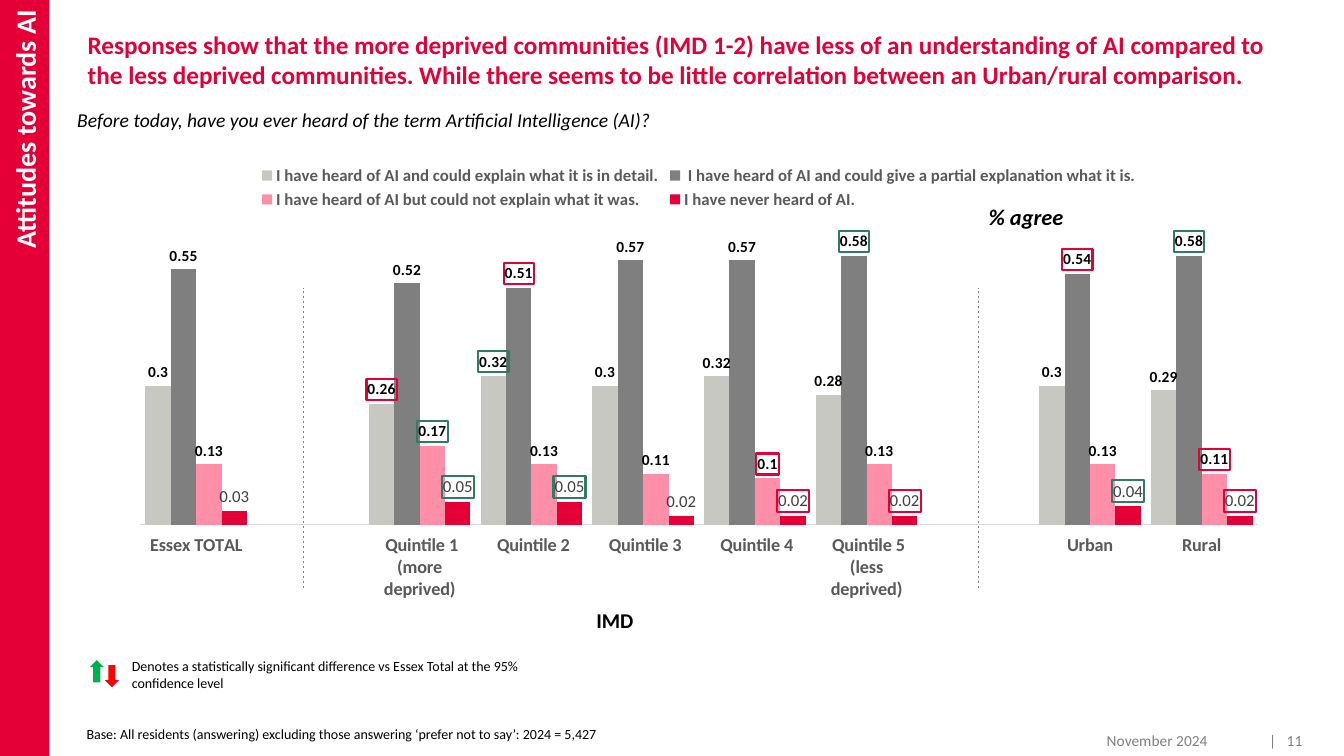
from pptx import Presentation
from pptx.chart.data import CategoryChartData
from pptx.dml.color import RGBColor
from pptx.enum.chart import XL_CHART_TYPE, XL_LABEL_POSITION, XL_LEGEND_POSITION, XL_TICK_LABEL_POSITION, XL_TICK_MARK
from pptx.enum.dml import MSO_LINE
from pptx.enum.shapes import MSO_CONNECTOR, MSO_SHAPE
from pptx.enum.text import MSO_ANCHOR, MSO_AUTO_SIZE, PP_ALIGN
from pptx.oxml import parse_xml
from pptx.oxml.ns import nsdecls, qn
from pptx.util import Inches, Pt

RED = RGBColor(0xE4, 0x00, 0x37)
PINK = RGBColor(0xFF, 0x8E, 0xA9)
STONE = RGBColor(0xC8, 0xC8, 0xC3)
GREY = RGBColor(0x7F, 0x7F, 0x7F)
FOOTER_GREY = RGBColor(0x80, 0x80, 0x80)
AXIS_TEXT = RGBColor(0x59, 0x59, 0x59)
AXIS_LINE = RGBColor(0xD9, 0xD9, 0xD9)
LABEL_GREY = RGBColor(0x40, 0x40, 0x40)
BOX_GREEN = RGBColor(0x2E, 0x7D, 0x60)
UP_GREEN = RGBColor(0x00, 0xB0, 0x50)
DOWN_RED = RGBColor(0xFF, 0x00, 0x00)
BLACK = RGBColor(0, 0, 0)
WHITE = RGBColor(0xFF, 0xFF, 0xFF)

CATEGORIES = ["Essex TOTAL", "", " Quintile 1 (more deprived)", " Quintile 2", " Quintile 3",
              " Quintile 4", " Quintile 5 (less deprived)", "", "Urban", "Rural"]
BOLD_LABEL = dict(size=11, bold=True)
PLAIN_LABEL = dict(size=12, color=LABEL_GREY, bold=False)
SERIES = [
    ("I have heard of AI and could explain what it is in detail.", STONE, BOLD_LABEL,
     (0.3, None, 0.26, 0.32, 0.3, 0.32, 0.28, None, 0.3, 0.29), {2: RED, 3: BOX_GREEN}),
    (" I have heard of AI and could give a partial explanation what it is.", GREY, BOLD_LABEL,
     (0.55, None, 0.52, 0.51, 0.57, 0.57, 0.58, None, 0.54, 0.58),
     {3: RED, 6: BOX_GREEN, 8: RED, 9: BOX_GREEN}),
    ("I have heard of AI but could not explain what it was.", PINK, BOLD_LABEL,
     (0.13, None, 0.17, 0.13, 0.11, 0.1, 0.13, None, 0.13, 0.11),
     {2: BOX_GREEN, 5: RED, 9: RED}),
    ("I have never heard of AI.", RED, PLAIN_LABEL,
     (0.03, None, 0.05, 0.05, 0.02, 0.02, 0.02, None, 0.04, 0.02),
     {2: BOX_GREEN, 3: BOX_GREEN, 5: RED, 6: RED, 8: BOX_GREEN, 9: RED}),
]


class SlideBuilder:
    """Draw styled elements on a slide measured as 40 columns by 22.5 rows."""

    def __init__(self, prs, font="Calibri"):
        self.prs, self.font = prs, font
        self.s = prs.slides.add_slide(prs.slide_layouts[5])

    def grid(self, *cells):
        col = self.prs.slide_width / 40
        return [round(cell * col) for cell in cells]

    def style(self, font, color=BLACK, size=10, **formats):
        font.color.rgb = color
        for name, value in dict(name=self.font, size=Pt(size), **formats).items():
            setattr(font, name, value)

    def fill_text(self, sp, text, align=PP_ALIGN.LEFT, insets=(0.1, 0.05, 0.1, 0.05),
                  anchor=MSO_ANCHOR.TOP, **formats):
        tf = sp.text_frame
        sides = zip(("margin_left", "margin_top", "margin_right", "margin_bottom"), map(Inches, insets))
        for name, value in dict(sides, word_wrap=True, auto_size=MSO_AUTO_SIZE.NONE,
                                vertical_anchor=anchor).items():
            setattr(tf, name, value)
        p = tf.paragraphs[0]
        p.alignment = align
        r = p.add_run()
        r.text = text
        self.style(r.font, **formats)

    def title(self, box, text, **formats):
        sp = self.s.shapes.title
        for name, value in zip(("left", "top", "width", "height"), self.grid(*box)):
            setattr(sp, name, value)
        self.fill_text(sp, text, **formats)

    def text(self, box, text, **formats):
        self.fill_text(self.s.shapes.add_textbox(*self.grid(*box)), text, **formats)

    def shape(self, kind, box, fill):
        sp = self.s.shapes.add_shape(kind, *self.grid(*box))
        sp.shadow.inherit = False
        sp.fill.solid()
        sp.fill.fore_color.rgb = fill
        sp.line.fill.background()
        return sp

    def sidebar(self, box, text, **formats):
        sp = self.shape(MSO_SHAPE.RECTANGLE, box, RED)
        self.fill_text(sp, text, anchor=MSO_ANCHOR.MIDDLE, **formats)
        sp.element.xpath(".//a:bodyPr")[0].set("vert", "vert270")

    def divider(self, col, top, bottom):
        line = self.s.shapes.add_connector(MSO_CONNECTOR.STRAIGHT, *self.grid(col, bottom, col, top))
        line.line.color.rgb = GREY
        line.line.width = Pt(0.5)
        line.line.dash_style = MSO_LINE.DASH
        line.element.spPr.append(parse_xml(f"<a:effectLst {nsdecls('a')}/>"))

    def labels(self, series, formats, boxes):
        labels = series.data_labels
        labels.show_value = True
        labels.position = XL_LABEL_POSITION.OUTSIDE_END
        self.style(labels.font, **formats)
        for idx, color in boxes.items():
            label = series.points[idx].data_label
            self.style(label.font, **formats)
            label.position = XL_LABEL_POSITION.OUTSIDE_END
            text_format = series._element.xpath(f'c:dLbls/c:dLbl[c:idx/@val="{idx}"]/c:txPr')[0]
            text_format.addprevious(parse_xml(
                f'<c:spPr {nsdecls("c", "a")}><a:noFill/><a:ln w="{Pt(1.5)}"><a:solidFill>'
                f'<a:srgbClr val="{color}"/></a:solidFill></a:ln></c:spPr>'))

    def axes(self, chart):
        axis = chart.category_axis
        axis.major_tick_mark = XL_TICK_MARK.NONE
        axis.tick_label_position = XL_TICK_LABEL_POSITION.LOW
        axis.format.line.color.rgb = AXIS_LINE
        axis.format.line.width = Pt(0.75)
        self.style(axis.tick_labels.font, AXIS_TEXT, 13, bold=True)
        formats = dict(visible=False, has_major_gridlines=False, minimum_scale=0, maximum_scale=0.7)
        for name, value in formats.items():
            setattr(chart.value_axis, name, value)

    def plot_area(self, chart, **shares):
        area = chart._chartSpace.chart.plotArea
        for layout in area.findall(qn("c:layout")):
            area.remove(layout)
        places = "".join(f'<c:{name} val="{share}"/>' for name, share in shares.items())
        area.insert(0, parse_xml(
            f'<c:layout {nsdecls("c")}><c:manualLayout><c:layoutTarget val="inner"/>'
            f'<c:xMode val="edge"/><c:yMode val="edge"/>{places}</c:manualLayout></c:layout>'))

    def chart(self, box, categories, rows):
        data = CategoryChartData()
        data.categories = categories
        for name, _, _, values, _ in rows:
            data.add_series(name, values)
        chart = self.s.shapes.add_chart(XL_CHART_TYPE.COLUMN_CLUSTERED, *self.grid(*box), data).chart
        self.style(chart.font)
        chart.has_title = False
        chart.has_legend = True
        chart.legend.position = XL_LEGEND_POSITION.TOP
        chart.legend.include_in_layout = False
        self.style(chart.legend.font, AXIS_TEXT, 12, bold=True)
        self.axes(chart)
        self.plot_area(chart, x=0.01, y=0.09, w=0.98, h=0.64)
        plot = chart.plots[0]
        plot.gap_width, plot.overlap, plot.vary_by_categories = 40, 0, False
        for series, (_, color, formats, _, boxes) in zip(plot.series, rows):
            series.format.fill.solid()
            series.format.fill.fore_color.rgb = color
            self.labels(series, formats, boxes)


def main():
    prs = Presentation()
    prs.slide_width, prs.slide_height = Inches(13.33), Inches(7.5)
    b = SlideBuilder(prs)
    b.title((2.31, 0.72, 36.75, 3.84),
            "Responses show that the more deprived communities (IMD 1-2) have less of an understanding "
            "of AI compared to the less deprived communities. While there seems to be little correlation "
            "between an Urban/rural comparison.",
            insets=(0.1, 0.05, 0.1, 0), size=18, color=RED, bold=True)
    b.text((2, 3.06, 37, 1), "Before today, have you ever heard of the term Artificial Intelligence (AI)?",
           size=14, italic=True)
    b.sidebar((0, 0, 1.47, 22.5), "Attitudes towards AI", align=PP_ALIGN.RIGHT,
              insets=(0.1, 0.1, 0.1, 0.05), size=20, color=WHITE, bold=True)
    for left, width, text in ((36.51, 2.55, "|   11"), (29.04, 7.2, "November 2024")):
        b.text((left, 21.63, width, 0.45), text, align=PP_ALIGN.RIGHT, size=11, color=FOOTER_GREY)
    b.chart((3.84, 4.59, 33.93, 15.12), CATEGORIES, SERIES)
    b.shape(MSO_SHAPE.UP_ARROW, (2.67, 19.65, 0.42, 0.66), UP_GREEN)
    b.shape(MSO_SHAPE.DOWN_ARROW, (3.12, 19.8, 0.42, 0.66), DOWN_RED)
    b.text((3.63, 19.44, 13, 1.32),
           "Denotes a statistically significant difference vs Essex Total at the 95% confidence level")
    b.text((29.13, 5.91, 10.26, 1.11), "% agree", size=16, bold=True, italic=True)
    for col in (9.03, 29.13):
        b.divider(col, 8.58, 17.52)
    b.text((2.28, 21.45, 23.31, 0.81),
           "Base: All residents (answering) excluding those answering ‘prefer not to say’: 2024 = 5,427")
    b.text((15.18, 18.09, 6.24, 1.29), "IMD", align=PP_ALIGN.CENTER, insets=(0, 0, 0, 0), size=15, bold=True)
    prs.save("out.pptx")


if __name__ == "__main__":
    main()
